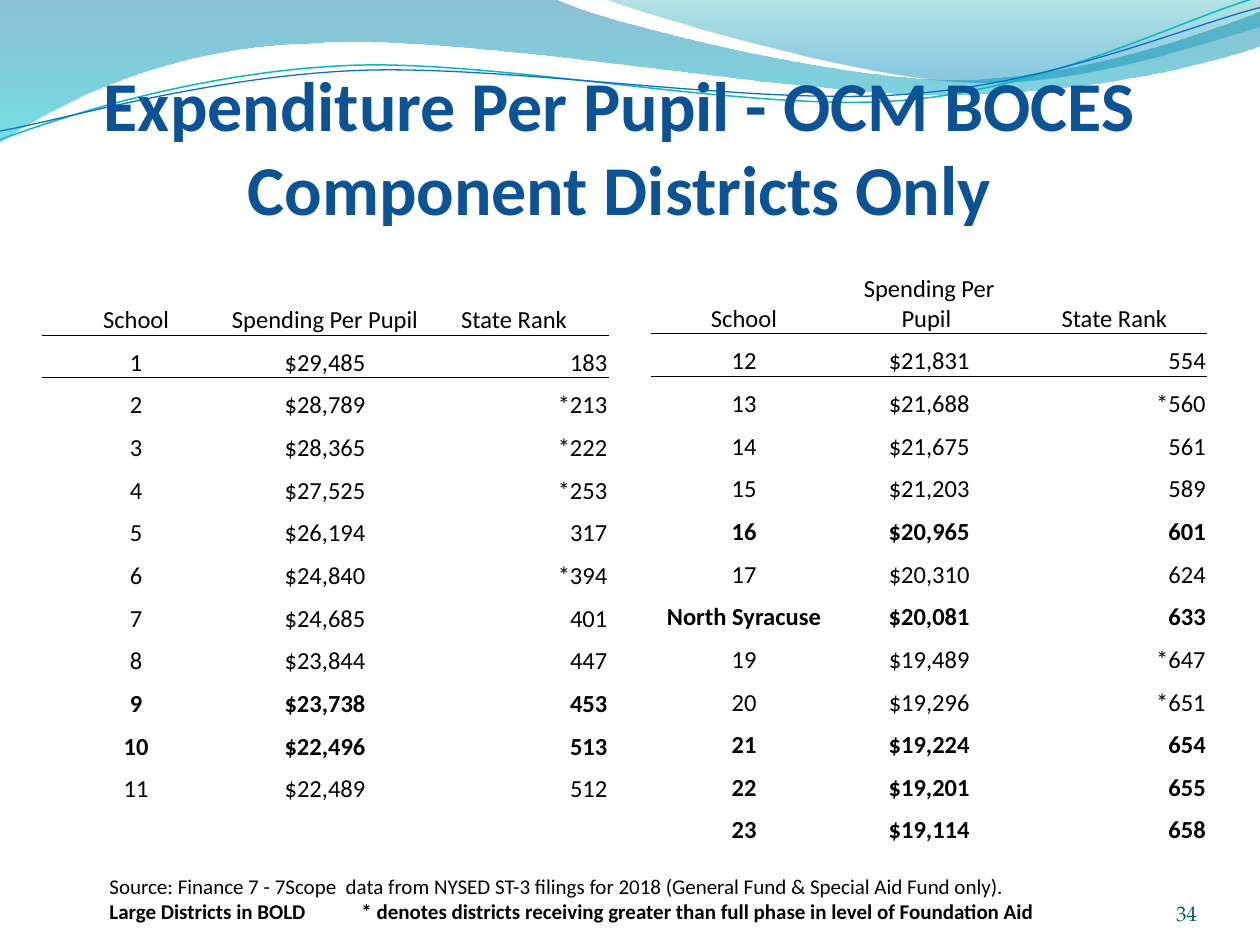
from dataclasses import dataclass

from lxml.etree import SubElement
from pptx import Presentation
from pptx.dml.color import RGBColor
from pptx.enum.text import MSO_ANCHOR as Anchor, PP_ALIGN as Align
from pptx.oxml import parse_xml
from pptx.oxml.ns import nsdecls, qn
from pptx.util import Inches, Pt

COLORS = {
    "title": "0B5394", "text": "000000", "number": "045D75",
    "teal line": "0AB8BF", "blue line": "0F6FC6",
    "deep blue": "0074A1", "cyan": "00C6CF", "teal": "00A1A9", "sky": "008BBF",
}
HEADER = ("School", "Spending Per Pupil ", "State Rank")
ROW_HEIGHT = Pt(24.4)
PLAIN_TABLE_STYLE = "{2D5ABB26-0587-4C30-8999-92F81FD0307C}"


@dataclass
class Stop:
    color: str
    position: float
    opacity: int


@dataclass
class Wave:
    """Each segment holds one point (a line) or three (a Bezier curve)."""
    start: tuple
    segments: list
    stops: tuple = ()
    line: str = ""
    width: float = 0


@dataclass
class District:
    school: str
    spending: str
    rank: str
    bold: bool = False


@dataclass
class RankTable:
    left: float
    column_width: float
    header_height: float
    districts: list
    spare_rows: int = 0


WAVES = [
    Wave((0, 0), [
        [(4.4, -0.01)],
        [(4.76, 0.17), (6.64, 0.63), (7.58, 0.63)],
        [(8.53, 0.63), (9.58, 0.26), (10, 0.09)],
        [(10.01, 0.36)],
        [(9.83, 0.44), (8.7, 0.76), (7.46, 0.75)],
        [(6.22, 0.75), (3.82, 0.28), (2.57, 0.34)],
        [(1.29, 0.36), (0.46, 0.83), (-0.01, 1.13)],
        [(0, 0)],
    ], stops=(Stop("deep blue", 0, 45), Stop("cyan", 1, 55))),
    Wave((4.79, -0.01), [
        [(5.09, 0.11), (6.82, 0.62), (7.69, 0.65)],
        [(8.56, 0.69), (9.61, 0.32), (10, 0.21)],
        [(10, 0)],
        [(4.79, -0.01)],
    ], stops=(Stop("teal", 0, 30), Stop("sky", 0.8, 45))),
    Wave((0, 1.11), [
        [(0.48, 0.93), (1.58, 0.57), (2.77, 0.52)],
        [(3.95, 0.47), (5.93, 0.89), (7.13, 0.8)],
        [(8.33, 0.71), (9.38, 0.15), (9.98, -0.02)],
    ], line="teal line", width=0.85),
    Wave((0, 1.04), [
        [(0.47, 0.96), (1.64, 0.61), (2.83, 0.56)],
        [(4.03, 0.51), (5.97, 0.84), (7.17, 0.75)],
        [(8.36, 0.67), (9.41, 0.21), (10, 0.06)],
    ], line="blue line", width=0.75),
]

TABLES = [
    RankTable(0.33, 1.5, 0.49, [
        District("1", "$29,485", "183"),
        District("2", "$28,789", "*213"),
        District("3", "$28,365", "*222"),
        District("4", "$27,525", "*253"),
        District("5", "$26,194", "317"),
        District("6", "$24,840", "*394"),
        District("7", "$24,685", "401"),
        District("8", "$23,844", "447"),
        District("9", "$23,738", "453", True),
        District("10", "$22,496", "513", True),
        District("11", "$22,489", "512"),
    ]),
    RankTable(5.17, 1.47, 0.34, [
        District("12", "$21,831", "554"),
        District("13", "$21,688", "*560"),
        District("14", "$21,675", "561"),
        District("15", "$21,203", "589"),
        District("16", "$20,965", "601", True),
        District("17", "$20,310", "624"),
        District("North Syracuse", "$20,081", "633", True),
        District("19", "$19,489", "*647"),
        District("20", "$19,296", "*651"),
        District("21", "$19,224", "654", True),
        District("22", "$19,201", "655", True),
        District("23", "$19,114", "658", True),
    ], spare_rows=1),
]


def rgb(name: str) -> RGBColor:
    return RGBColor.from_string(COLORS[name])


def add_run(paragraph, text: str, size: float, color: str = "text",
            bold: bool = False, face: str = "Calibri") -> None:
    run = paragraph.add_run()
    run.text = text
    font = run.font
    font.name, font.size, font.bold = face, Pt(size), bold
    font.color.rgb = rgb(color)


def bend_segments(shape, segments: list) -> None:
    """Join the three line steps of each curved segment into one Bezier."""
    steps = iter(list(shape._element.iter(qn("a:lnTo"))))
    for segment in segments:
        group = [next(steps) for _ in segment]
        if len(group) == 3:
            curve = parse_xml(f'<a:cubicBezTo {nsdecls("a")}/>')
            group[0].addprevious(curve)
            for step in group:
                curve.append(step[0])
                step.getparent().remove(step)


def add_wave(slide, wave: Wave) -> None:
    points = [(Inches(x), Inches(y)) for segment in wave.segments for x, y in segment]
    builder = slide.shapes.build_freeform(*(Inches(v) for v in wave.start))
    builder.add_line_segments(points, close=bool(wave.stops))
    shape = builder.convert_to_shape()
    bend_segments(shape, wave.segments)
    shape.shadow.inherit = False
    if not wave.stops:
        shape.fill.background()
        shape.line.color.rgb = rgb(wave.line)
        shape.line.width = Pt(wave.width)
        return
    shape.line.fill.background()
    shape.fill.gradient()
    shape.fill.gradient_angle = 270
    for target, stop in zip(shape.fill.gradient_stops, wave.stops):
        target.color.rgb = rgb(stop.color)
        target.position = stop.position
    for color, stop in zip(shape._element.spPr.iter(qn("a:srgbClr")), wave.stops):
        SubElement(color, qn("a:alpha")).set("val", str(stop.opacity * 1000))


def add_rule(cell, side: str) -> None:
    cell._tc.get_or_add_tcPr().insert(0, parse_xml(
        f'<a:{side} {nsdecls("a")} w="6350"><a:solidFill>'
        f'<a:srgbClr val="{COLORS["text"]}"/></a:solidFill></a:{side}>'))


def add_rank_table(slide, spec: RankTable) -> None:
    rows = [(HEADER, False)]
    rows += [((d.school, d.spending, d.rank), d.bold) for d in spec.districts]
    rows += [(("", "", ""), False)] * spec.spare_rows
    header_height = Inches(spec.header_height)
    table = slide.shapes.add_table(
        len(rows), len(HEADER), Inches(spec.left), Inches(2.17),
        Inches(spec.column_width * len(HEADER)),
        header_height + ROW_HEIGHT * (len(rows) - 1)).table
    table.first_row = table.horz_banding = False
    table._tbl.tblPr.find(qn("a:tableStyleId")).text = PLAIN_TABLE_STYLE
    for r, (texts, bold) in enumerate(rows):
        table.rows[r].height = ROW_HEIGHT if r else header_height
        for c, text in enumerate(texts):
            cell = table.cell(r, c)
            cell.fill.background()
            cell.vertical_anchor = Anchor.BOTTOM
            cell.margin_left = cell.margin_right = cell.margin_top = Inches(0.01)
            cell.margin_bottom = 0
            paragraph = cell.text_frame.paragraphs[0]
            paragraph.alignment = Align.RIGHT if r and c == 2 else Align.CENTER
            if text:
                add_run(paragraph, text, 14, bold=bold)
            if r < 2:
                add_rule(cell, "lnT" if r else "lnB")


def add_title(slide) -> None:
    title = slide.shapes.title
    slide.shapes._spTree.append(title._element)  # in front of the waves
    title.left, title.top = Inches(0.33), Inches(1.01)
    title.width, title.height = Inches(9.17), Inches(0.81)
    frame = title.text_frame
    frame.vertical_anchor = Anchor.BOTTOM
    frame.margin_left = frame.margin_right = frame.margin_bottom = 0
    paragraph = frame.paragraphs[0]
    paragraph.alignment = Align.CENTER
    add_run(paragraph, "Expenditure Per Pupil - OCM BOCES", 40, "title", True)
    paragraph.add_line_break()
    add_run(paragraph, "Component Districts Only", 40, "title", True)


def add_text_frame(slide, left: float, top: float, width: float, height: float):
    frame = slide.shapes.add_textbox(
        Inches(left), Inches(top), Inches(width), Inches(height)).text_frame
    frame.word_wrap = True
    return frame


def main() -> None:
    deck = Presentation()
    deck.slide_width, deck.slide_height = Inches(10), Inches(7.5)
    slide = deck.slides.add_slide(deck.slide_layouts[5])
    for wave in WAVES:
        add_wave(slide, wave)
    add_title(slide)

    number = add_text_frame(slide, 8.67, 6.95, 0.83, 0.4)
    number.margin_left = number.margin_right = number.margin_top = number.margin_bottom = 0
    number.vertical_anchor = Anchor.BOTTOM
    number.paragraphs[0].alignment = Align.RIGHT
    add_run(number.paragraphs[0], "34", 12, "number", face="TeX Gyre Pagella")

    source = add_text_frame(slide, 0.77, 6.88, 7.81, 0.5)
    add_run(source.paragraphs[0], "Source: Finance 7 - 7Scope  data from NYSED ST-3 filings "
            "for 2018 (General Fund & Special Aid Fund only).", 12)
    add_run(source.add_paragraph(), "Large Districts in BOLD \t* denotes districts receiving "
            "greater than full phase in level of Foundation Aid", 12, bold=True)

    for rank_table in TABLES:
        add_rank_table(slide, rank_table)
    deck.save("out.pptx")


if __name__ == "__main__":
    main()
